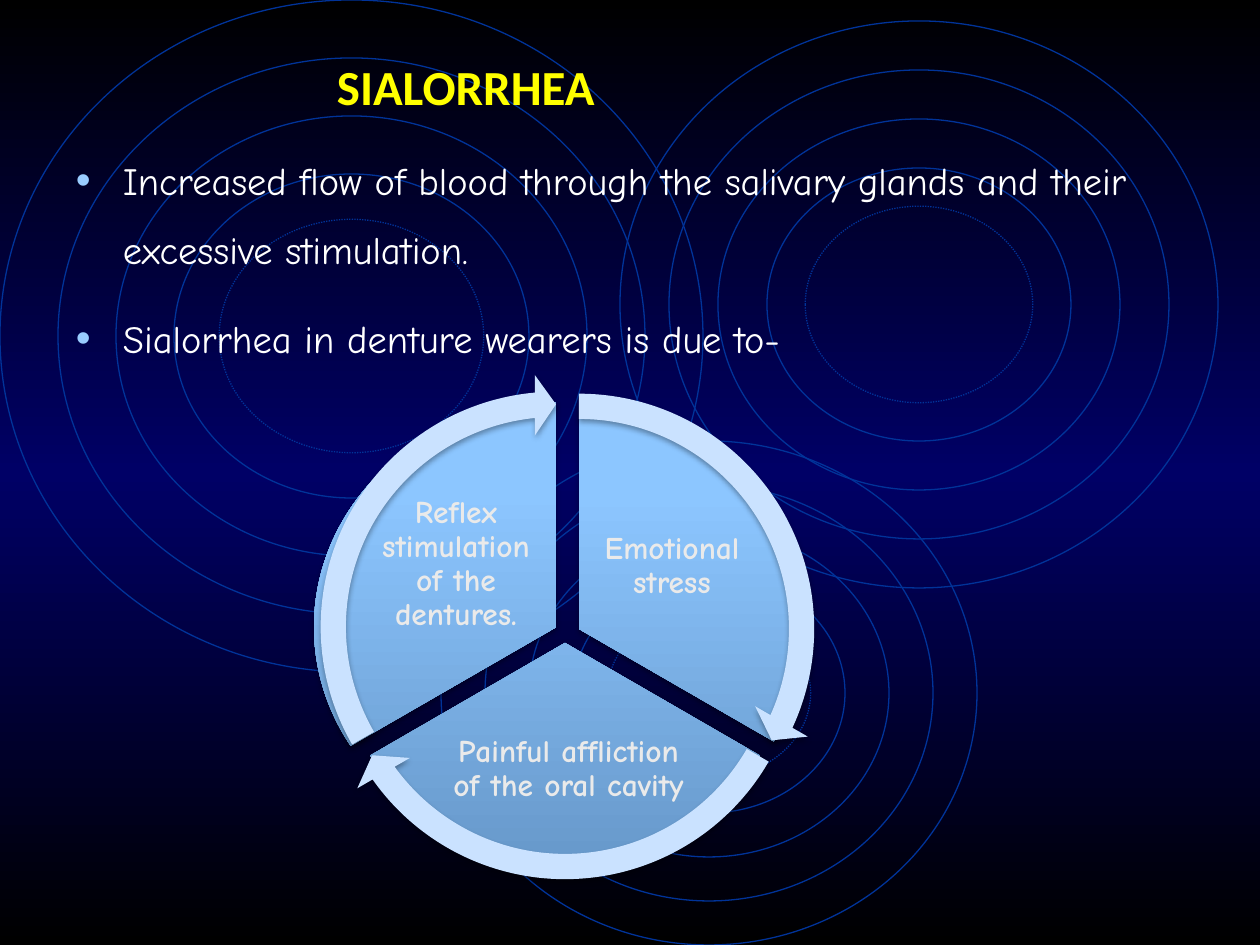
from copy import deepcopy

from lxml.etree import SubElement
from pptx import Presentation
from pptx.dml.color import RGBColor
from pptx.enum.dml import MSO_LINE
from pptx.enum.shapes import MSO_SHAPE
from pptx.enum.text import MSO_ANCHOR, PP_ALIGN
from pptx.oxml.ns import qn
from pptx.util import Emu, Pt

RING_GROUPS = [
    (0, 0, 703, 672, 58),
    (441, 441, 536, 504, 44),
    (620, 21, 598, 567, 49),
]
RING_STEPS = [0, 1, 2, 3, 3.78]
BACKGROUND_STOPS = [(0, "000000"), (0.5, "000066"), (1, "000000")]
SECTOR_STOPS = [(0, "6798CA"), (0.8, "8CC6FF"), (1, "8EC7FF")]
SECTORS = [
    ("Emotional stress", (354, 404, 450, 450), (162, 18), (592, 499, 160, 134)),
    ("Painful affliction of the oral cavity", (340, 418, 450, 450), (18, 90), (448, 710, 241, 118)),
    ("Reflex stimulation of the dentures.", (314, 402, 485, 450), (90, 162), (369, 497, 174, 134)),
]
ARROWS = [
    (326, 376, 14.73, 161.99),
    (312, 391, 86.72, 18.01),
    (303, 374, 158.73, 90),
]
ARROW_SIZE = 506
BULLETS = [
    "Increased flow of blood through the salivary glands and their excessive stimulation.",
    "Sialorrhea in denture wearers is due to-",
]
TITLE_FONT = {"name": "Calibri", "size": Pt(28), "bold": True}
BODY_FONT = {"name": "Comic Neue", "size": Pt(22), "bold": False}
LABEL_FONT = {"name": "Comic Neue", "size": Pt(18), "bold": True}
BULLET_FORMAT = {"line_spacing": 1.5, "space_before": Pt(11)}
LABEL_FORMAT = {"line_spacing": 0.9, "alignment": PP_ALIGN.CENTER}


def px(length):
    return Emu(round(length * 914400 / 126))


def color(value):
    return RGBColor.from_string(value)


def apply_format(target, values):
    for name, value in values.items():
        setattr(target, name, value)


def set_gradient(fill, element, stops, angle):
    fill.gradient()
    fill.gradient_angle = angle
    stop_list = next(element.iter(qn("a:gsLst")))
    stop_list.append(deepcopy(stop_list[-1]))
    for stop, (position, value) in zip(fill.gradient_stops, stops):
        stop.position = position
        stop.color.rgb = color(value)


def add_shadow(shape):
    effects = shape._element.spPr.find(qn("a:effectLst"))
    shadow = SubElement(effects, qn("a:outerShdw"), blurRad="40000", dist="23000",
                        dir="5400000", rotWithShape="0")
    tone = SubElement(shadow, qn("a:srgbClr"), val="000000")
    SubElement(tone, qn("a:alpha"), val="35000")


def add_preset(page, kind, bounds, adjustments=()):
    shape = page.shapes.add_shape(kind, *map(px, bounds))
    shape.shadow.inherit = False
    for index, value in enumerate(adjustments):
        shape.adjustments[index] = value
    return shape


def add_rings(page, left, top, width, height, gap):
    for step in RING_STEPS:
        inset = gap * step
        bounds = (left + inset, top + inset, width - 2 * inset, height - 2 * inset)
        ring = add_preset(page, MSO_SHAPE.OVAL, bounds)
        ring.fill.background()
        ring.line.color.rgb = color("003399")
        ring.line.width = Pt(0.75)
        if step == RING_STEPS[-1]:
            ring.line.dash_style = MSO_LINE.ROUND_DOT


def add_text(page, bounds, texts, font, font_color, paragraph_format, margin=0,
             anchor=MSO_ANCHOR.TOP):
    frame = page.shapes.add_textbox(*map(px, bounds)).text_frame
    sides = ("margin_left", "margin_top", "margin_right", "margin_bottom")
    apply_format(frame, dict.fromkeys(sides, px(margin)))
    apply_format(frame, {"word_wrap": True, "vertical_anchor": anchor})
    for index, text in enumerate(texts):
        para = frame.add_paragraph() if index else frame.paragraphs[0]
        apply_format(para, paragraph_format)
        span = para.add_run()
        span.text = text
        apply_format(span.font, font)
        span.font.color.rgb = color(font_color)
    return frame


def add_bullets(frame):
    for para in frame.paragraphs:
        properties = para._p.get_or_add_pPr()
        properties.set("marL", str(px(47)))
        properties.set("indent", str(-px(47)))
        bullet_color = SubElement(properties, qn("a:buClr"))
        SubElement(bullet_color, qn("a:srgbClr"), val="99CCFF")
        SubElement(properties, qn("a:buSzPct"), val="110000")
        SubElement(properties, qn("a:buFont"), typeface="Arial")
        SubElement(properties, qn("a:buChar"), char="•")


def add_sector(page, label, bounds, angles, label_bounds):
    sector = add_preset(page, MSO_SHAPE.PIE, bounds, angles)
    set_gradient(sector.fill, sector._element, SECTOR_STOPS, 90)
    sector.line.fill.background()
    add_shadow(sector)
    add_text(page, label_bounds, [label], LABEL_FONT, "EAEAEA", LABEL_FORMAT, 4,
             MSO_ANCHOR.MIDDLE)


def add_arrow(page, left, top, end, start):
    bounds = (left, top, ARROW_SIZE, ARROW_SIZE)
    arrow = add_preset(page, MSO_SHAPE.CIRCULAR_ARROW, bounds, (0.05, 3.28, end, start, 0.06))
    arrow.fill.solid()
    arrow.fill.fore_color.rgb = color("CAE2FF")
    arrow.line.fill.background()
    add_shadow(arrow)


def main():
    deck = Presentation()
    deck.slide_width, deck.slide_height = px(1260), px(945)
    page = deck.slides.add_slide(deck.slide_layouts[6])
    set_gradient(page.background.fill, page._element, BACKGROUND_STOPS, 270)
    for group in RING_GROUPS:
        add_rings(page, *group)
    add_text(page, (337, 57, 400, 60), ["SIALORRHEA"], TITLE_FONT, "FFFF00", {})
    add_bullets(add_text(page, (76, 134, 1108, 236), BULLETS, BODY_FONT, "FFFFFF", BULLET_FORMAT))
    for sector in SECTORS:
        add_sector(page, *sector)
    for arrow in ARROWS:
        add_arrow(page, *arrow)
    deck.save("out.pptx")


if __name__ == "__main__":
    main()
